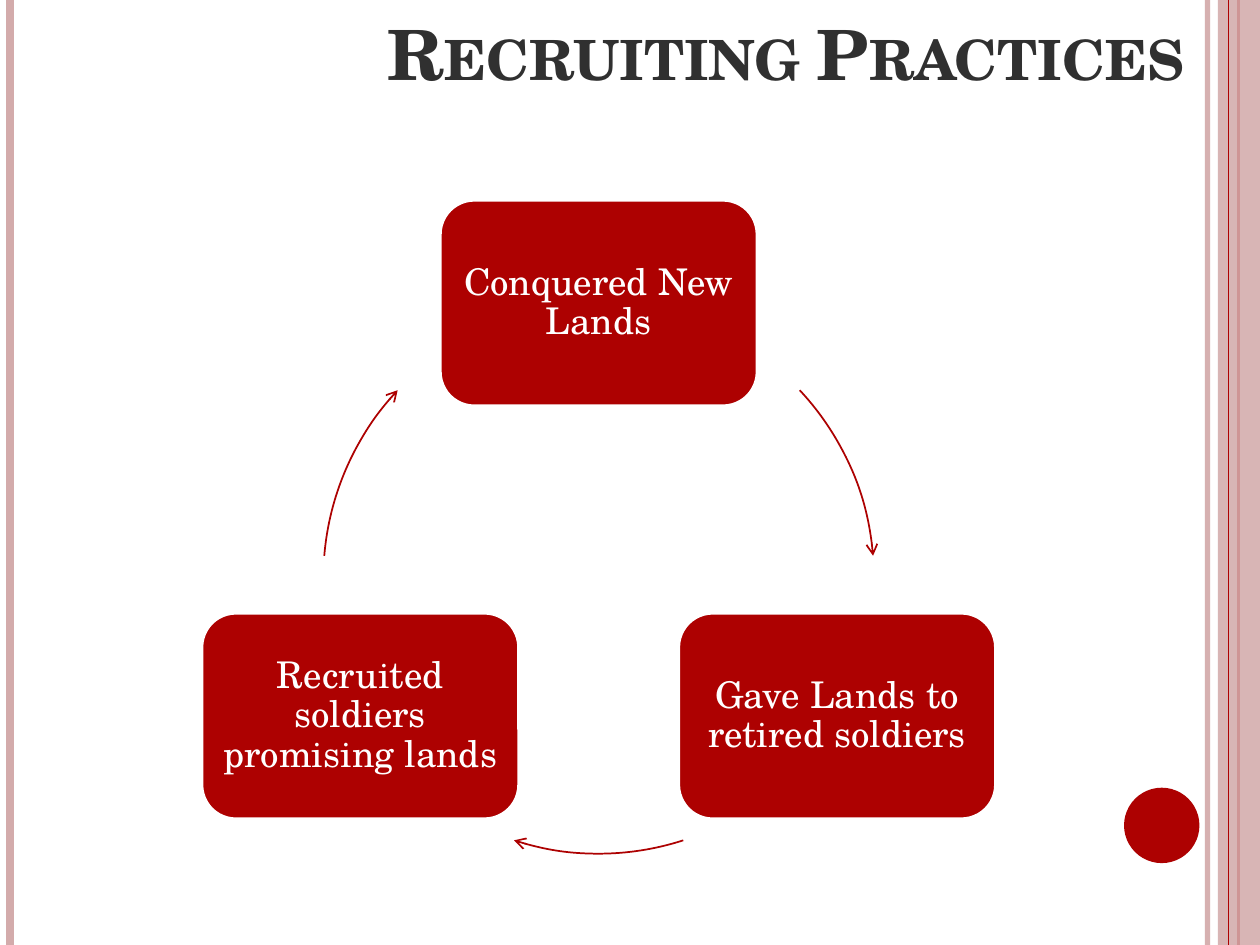
from math import cos, radians, sin

from lxml import etree
from pptx import Presentation
from pptx import util as u
from pptx.dml.color import RGBColor
from pptx.enum import shapes, text
from pptx.oxml.ns import qn

FONT = "TeX Gyre Schola"
COLORS = {"red": "AD0101", "pink": "D3ABAB", "dark": "303030", "white": "FFFFFF"}
HIGH = 19.05


def rgb(name):
    return RGBColor.from_string(COLORS[name])


def fade(props, alpha):
    """Make the solid colour inside props partly transparent."""
    node = next(props.iter(qn("a:srgbClr")))
    etree.SubElement(node, qn("a:alpha")).set("val", str(alpha * 1000))


def write(frame, words, size, color, align, anchor, inset=None, bold=False,
          small=False, space=1.0):
    frame.word_wrap = True
    frame.auto_size = text.MSO_AUTO_SIZE.NONE
    frame.vertical_anchor = anchor
    if inset is not None:
        frame.margin_left = frame.margin_right = u.Cm(inset)
        frame.margin_top = frame.margin_bottom = u.Cm(inset)
    para = frame.paragraphs[0]
    para.alignment = align
    para.line_spacing = space
    run = para.add_run()
    run.text = words
    font = run.font
    font.name, font.size, font.bold = FONT, u.Pt(size), bold
    font.color.rgb = rgb(color)
    if small:
        run._r.get_or_add_rPr().set("cap", "small")


class Deck:
    def __init__(self):
        self.prs = Presentation()
        self.prs.slide_width, self.prs.slide_height = u.Cm(25.4), u.Cm(HIGH)
        self.slide = self.prs.slides.add_slide(self.prs.slide_layouts[5])

    def title(self, words, x, y, w, h):
        box = self.slide.shapes.title
        box.left, box.top, box.width, box.height = map(u.Cm, (x, y, w, h))
        write(box.text_frame, words, 39.6, "dark", text.PP_ALIGN.RIGHT,
              text.MSO_ANCHOR.BOTTOM, bold=True, small=True)

    def shape(self, kind, x, y, w, h, fill=None, line=None, width=1, alpha=100):
        item = self.slide.shapes.add_shape(kind, *map(u.Cm, (x, y, w, h)))
        item.shadow.inherit = False
        if fill:
            item.fill.solid()
            item.fill.fore_color.rgb = rgb(fill)
            if alpha < 100:
                fade(item._element.spPr, alpha)
        else:
            item.fill.background()
        if line:
            item.line.color.rgb = rgb(line)
            item.line.width = u.Pt(width)
        else:
            item.line.fill.background()
        return item

    def stripe(self, x, color, width, alpha=100):
        item = self.slide.shapes.add_connector(
            shapes.MSO_CONNECTOR.STRAIGHT, u.Cm(x), 0, u.Cm(x), u.Cm(HIGH))
        item.line.color.rgb = rgb(color)
        item.line.width = u.Pt(width)
        if alpha < 100:
            fade(item.line._get_or_add_ln(), alpha)
        etree.SubElement(item._element.spPr, qn("a:effectLst"))

    def card(self, words, x, y, w=6.4, h=4.16):
        item = self.shape(shapes.MSO_SHAPE.ROUNDED_RECTANGLE, x - w / 2, y - h / 2,
                          w, h, "red", "white", 2)
        # The rounded corners already add about 0.2 cm to the inset
        write(item.text_frame, words, 21, "white", text.PP_ALIGN.CENTER,
              text.MSO_ANCHOR.MIDDLE, inset=0.22, space=0.9)

    def arrow(self, x, y, r, start, end):
        item = self.shape(shapes.MSO_SHAPE.ARC, x - r, y - r, 2 * r, 2 * r, line="red")
        # Arc angles are stored in 1/60000 degree, scaled by 100000
        for i, angle in enumerate((start, end)):
            item.adjustments[i] = angle % 360 * 0.6
        etree.SubElement(item.line._get_or_add_ln(), qn("a:tailEnd")).set("type", "arrow")


def main():
    deck = Deck()

    # Side stripes and dot
    deck.stripe(24.34, "pink", 3, 93)
    deck.stripe(0.21, "pink", 4.5)
    deck.stripe(24.97, "red", 1.5)
    deck.shape(shapes.MSO_SHAPE.RECTANGLE, 24.55, 0, 0.85, HIGH, "pink", alpha=87)
    deck.stripe(24.77, "red", 0.75)
    deck.shape(shapes.MSO_SHAPE.OVAL, 22.66, 15.88, 1.52, 1.52, "red")

    deck.title("Recruiting Practices", 1.27, 0, 22.86, 2.03)

    # Cycle: cards every 120 degrees, arrows in the gaps between them
    x, y, r = 12.07, 11.66, 5.55
    steps = [
        ("Conquered New Lands", 46.9, 34.7),
        ("Gave Lands to retired soldiers", 42.1, 42.1),
        ("Recruited soldiers promising lands", 34.7, 46.9),
    ]
    for i, (words, after, before) in enumerate(steps):
        angle = -90 + 120 * i
        deck.card(words, x + r * cos(radians(angle)), y + r * sin(radians(angle)))
        deck.arrow(x, y, r, angle + after, angle + 120 - before)

    deck.prs.save("out.pptx")


if __name__ == "__main__":
    main()
